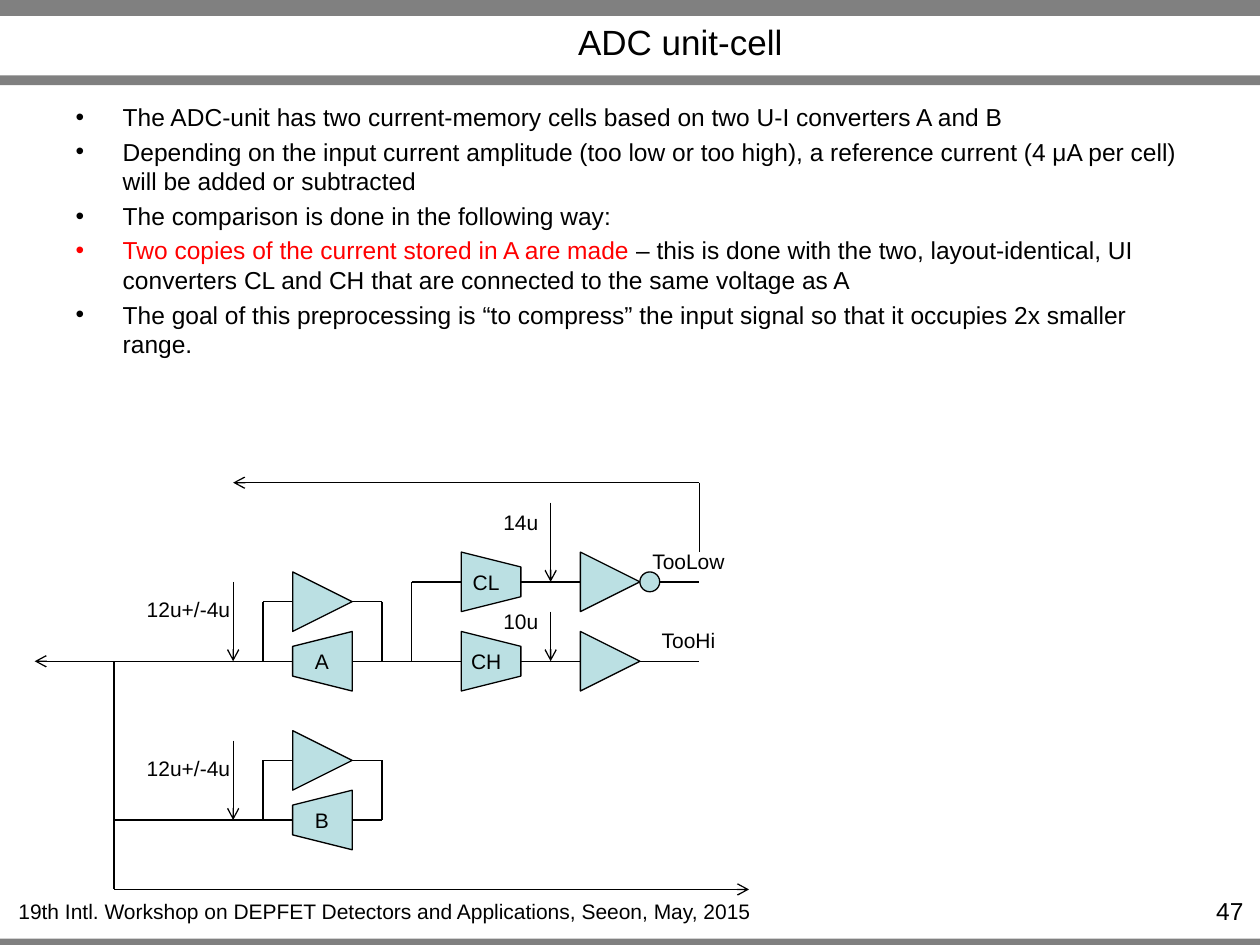
import itertools

import pptx
import pptx.util
import pptx.dml.color
import pptx.enum.shapes
import pptx.enum.text
import pptx.oxml
import pptx.oxml.ns

Cm, Pt = pptx.util.Cm, pptx.util.Pt
Kind = pptx.enum.shapes.MSO_SHAPE
Align = pptx.enum.text.PP_ALIGN
Fit = pptx.enum.text.MSO_AUTO_SIZE
Anchor = pptx.enum.text.MSO_ANCHOR

COLORS = {"ink": "000000", "bar": "808080", "cell": "BBE0E3", "alert": "FF0000"}
SIDE = 1.2  # width and height of an amplifier or converter

BULLETS = [
    ["The ADC-unit has two current-memory cells based on two U-I converters A and B"],
    ["Depending on the input current amplitude (too low or too high), a reference "
     "current (4 μA per cell) will be added or subtracted"],
    ["The comparison is done in the following way:"],
    ["Two copies of the current stored in A are made",
     " – this is done with the two, layout-identical, UI converters CL and CH "
     "that are connected to the same voltage as A"],
    ["The goal of this preprocessing is “to compress” the input signal so that it "
     "occupies 2x smaller range."],
]


def tint(name):
    return pptx.dml.color.RGBColor.from_string(COLORS[name])


class Board:
    """Holds the style and the current slide; all lengths are in centimetres."""

    def __init__(self, slide, font="Arial", small=12, line=0.75):
        self.slide, self.font, self.small, self.line = slide, font, small, line

    def style(self, run, size, color="ink"):
        run.font.name, run.font.size = self.font, Pt(size)
        run.font.color.rgb = tint(color)

    def place(self, shape, left, top, width, height):
        shape.left, shape.top = Cm(left), Cm(top)
        shape.width, shape.height = Cm(width), Cm(height)

    def title(self, text):
        shape = self.slide.shapes.title
        self.place(shape, 3.3, 0.36, 20.83, 0.97)
        frame = shape.text_frame
        frame.text = text
        frame.auto_size = Fit.NONE
        frame.vertical_anchor = Anchor.MIDDLE
        frame.paragraphs[0].alignment = Align.CENTER
        self.style(frame.paragraphs[0].runs[0], 20)

    def bullets(self, items):
        """Fill the body; the first of several parts in an item is highlighted."""
        body = self.slide.placeholders[1]
        self.place(body, 1.27, 1.93, 22.86, 5)
        frame = body.text_frame
        frame.auto_size = Fit.NONE
        for i, parts in enumerate(items):
            par = frame.paragraphs[0] if i == 0 else frame.add_paragraph()
            par.space_before = Pt(3 if i else 0)
            props = par._p.get_or_add_pPr()
            props.set("marL", str(Cm(0.95)))
            props.set("indent", str(-Cm(0.95)))
            mark = pptx.oxml.parse_xml(
                f'<a:buChar {pptx.oxml.ns.nsdecls("a")} char="•"/>')
            props.append(mark)
            for j, part in enumerate(parts):
                run = par.add_run()
                run.text = part
                marked = len(parts) > 1 and j == 0
                self.style(run, 14, "alert" if marked else "ink")

    def text(self, words, left, top, width, height=0.76, size=None,
             align=Align.CENTER):
        box = self.slide.shapes.add_textbox(Cm(left), Cm(top), Cm(width), Cm(height))
        par = box.text_frame.paragraphs[0]
        par.text, par.alignment = words, align
        self.style(par.runs[0], size or self.small)

    def label(self, words, x, y, width=2):
        """Text centred on a point."""
        self.text(words, x - width / 2, y - 0.38, width)

    def bar(self, top, height):
        shape = self.shape(Kind.RECTANGLE, 0, top, 25.4, height, "bar")
        shape.line.fill.background()

    def shape(self, kind, left, top, width=SIDE, height=SIDE, fill="cell", turn=0):
        shape = self.slide.shapes.add_shape(
            kind, Cm(left), Cm(top), Cm(width), Cm(height))
        shape.shadow.inherit = False
        shape.rotation = turn
        shape.fill.solid()
        shape.fill.fore_color.rgb = tint(fill)
        shape.line.color.rgb = tint("ink")
        shape.line.width = Pt(self.line)
        return shape

    def amp(self, left, y):
        self.shape(Kind.ISOSCELES_TRIANGLE, left, y - SIDE / 2, turn=90)

    def gate(self, name, left, y, turn, flow):
        """Converter whose text flow cancels its turn, so the name reads level."""
        shape = self.shape(Kind.TRAPEZOID, left, y - SIDE / 2, turn=turn)
        frame = shape.text_frame
        frame.text = name
        frame.word_wrap = False
        frame.vertical_anchor = Anchor.MIDDLE
        frame._txBody.bodyPr.set("vert", flow)
        frame.paragraphs[0].alignment = Align.CENTER
        self.style(frame.paragraphs[0].runs[0], self.small)

    def wire(self, *points, arrow=False):
        """Straight lines through the points, with an arrowhead at the end if asked."""
        for (x1, y1), (x2, y2) in itertools.pairwise(points):
            link = self.slide.shapes.add_connector(
                pptx.enum.shapes.MSO_CONNECTOR.STRAIGHT,
                Cm(x1), Cm(y1), Cm(x2), Cm(y2))
            link.line.color.rgb = tint("ink")
            link.line.width = Pt(self.line)
            space = pptx.oxml.ns.nsdecls("a")
            if arrow and (x2, y2) == points[-1]:
                link.line._get_or_add_ln().append(
                    pptx.oxml.parse_xml(f'<a:tailEnd {space} type="arrow"/>'))
            link._element.spPr.append(pptx.oxml.parse_xml(f"<a:effectLst {space}/>"))

    def memory(self, name, y):
        """Current-memory cell: converter with an amplifier looped above it."""
        loop = y - SIDE
        self.wire((2.3, y), (5.9, y))
        self.wire((5.3, y), (5.3, loop), (5.9, loop))
        self.wire((7.1, loop), (7.7, loop), (7.7, y), (7.1, y))
        self.wire((4.7, y - 1.6), (4.7, y), arrow=True)
        self.label("12u+/-4u", 3.8, y - 1.04, 2.2)
        self.amp(5.9, loop)
        self.gate(name, 5.9, y, 270, "eaVert")

    def compare(self, name, y, level, rise, drop, result):
        """Comparator row: converter, reference arrow, amplifier and output."""
        self.wire((10.5, y), (11.7, y))
        self.wire((12.9, y), (14.1, y))
        self.wire((11.1, y - rise), (11.1, y), arrow=True)
        self.label(level, 10.5, y - rise + drop)
        self.gate(name, 9.3, y, 90, "vert270")
        self.amp(11.7, y)
        self.label(result, 13.88, y - 0.42)


def main():
    deck = pptx.Presentation()
    deck.slide_width, deck.slide_height = Cm(25.4), Cm(19.05)
    board = Board(deck.slides.add_slide(deck.slide_layouts[1]))

    for top, height in ((0, 0.32), (1.52, 0.2), (18.92, 0.13)):
        board.bar(top, height)
    board.title("ADC unit-cell")
    board.bullets(BULLETS)
    board.text("19th Intl. Workshop on DEPFET Detectors and Applications, "
               "Seeon, May, 2015", 0.05, 17.98, 15.42)
    board.text("47", 23.11, 17.93, 2.21, 0.61, 14, Align.RIGHT)

    low, high, second = 11.73, 13.33, 16.53
    top, floor = 9.73, 17.93
    board.memory("A", high)
    board.memory("B", second)
    board.wire((7.7, high), (9.3, high))
    board.wire((8.3, high), (8.3, low), (9.3, low))
    board.compare("CL", low, "14u", 1.6, 0.4, "TooLow")
    board.compare("CH", high, "10u", 1, 0.2, "TooHi")
    board.shape(Kind.OVAL, 12.9, low - 0.2, 0.4, 0.4)
    board.wire((2.3, high), (0.7, high), arrow=True)
    board.wire((2.3, high), (2.3, floor), (15.1, floor), arrow=True)
    board.wire((14.1, low - 0.6), (14.1, top), (4.7, top), arrow=True)
    deck.save("out.pptx")


if __name__ == "__main__":
    main()
